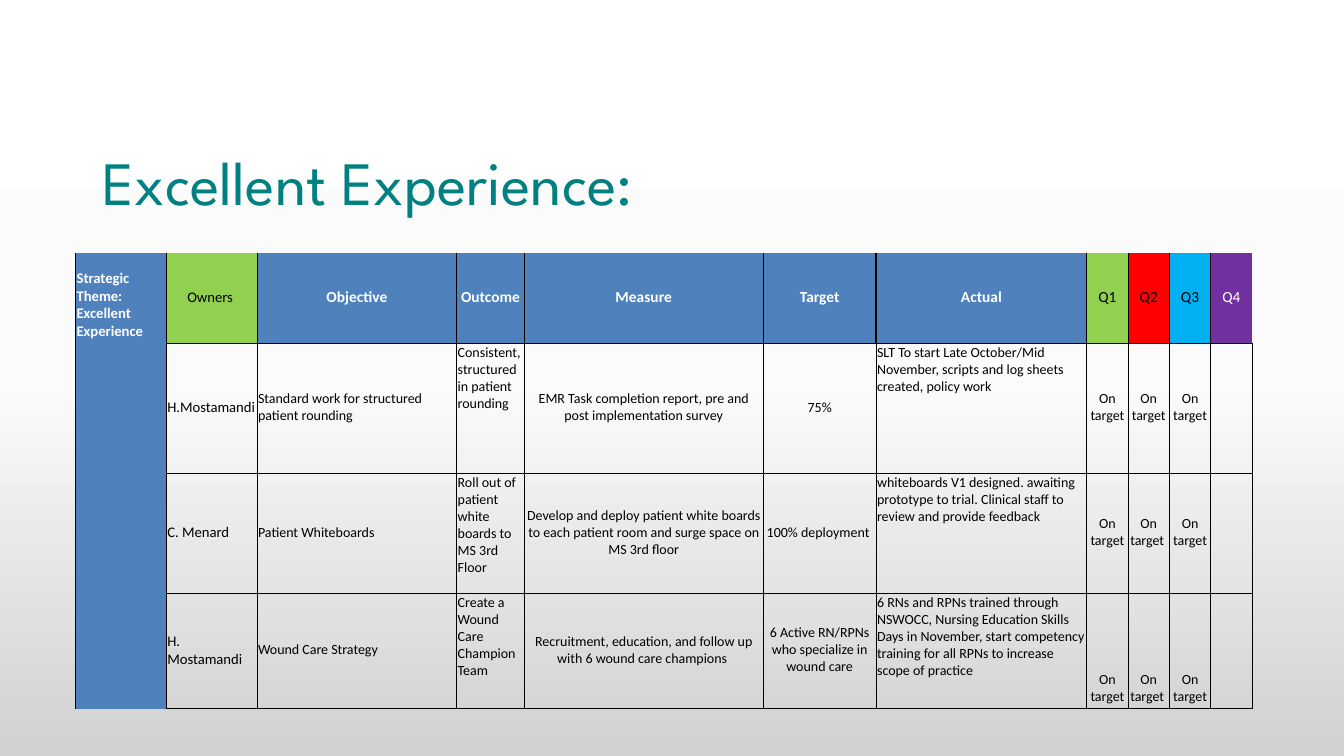
from lxml.etree import SubElement
from pptx import Presentation
from pptx.dml.color import RGBColor
from pptx.enum.text import MSO_ANCHOR, PP_ALIGN
from pptx.oxml.ns import qn
from pptx.util import Inches, Pt

BLUE, GREEN = "4F81BD", "92D050"
BLACK, WHITE, TEAL = "000000", "FFFFFF", "008080"
LEFT, CENTER = PP_ALIGN.LEFT, PP_ALIGN.CENTER
TOP, MIDDLE, BOTTOM = MSO_ANCHOR.TOP, MSO_ANCHOR.MIDDLE, MSO_ANCHOR.BOTTOM

COLUMN_WIDTHS = [0.9, 0.9, 1.98, 0.67, 2.37, 1.12, 2.09] + [0.41] * 4
ROW_HEIGHTS = [0.9, 1.29, 1.19, 1.14]
THEME = "Strategic Theme: Excellent Experience"

# Text, fill, text colour, size and bold of each heading after the theme
HEADINGS = [
    ("Owners ", GREEN, BLACK, 10.5, False),
    *[(text, BLUE, WHITE, 11, True)
      for text in ("Objective", "Outcome", "Measure", "Target", "Actual")],
    ("Q1", GREEN, BLACK, 11, False),
    ("Q2", "FF0000", BLACK, 11, False),
    ("Q3", "00B0F0", BLACK, 11, False),
    ("Q4", "7030A0", WHITE, 11, False),
]

# Owner, objective, outcome, measure, target, actual, Q1 to Q4
OBJECTIVES = [
    ("H.Mostamandi", "Standard work for structured patient rounding",
     "Consistent, structured in patient rounding",
     "EMR Task completion report, pre and post implementation survey", "75%",
     "SLT To start Late October/Mid November, scripts and log sheets created, "
     "policy work",
     "On target", "On target", "On target", ""),
    ("C. Menard", "Patient Whiteboards",
     "Roll out of patient white boards to MS 3rd Floor",
     "Develop and deploy patient white boards to each patient room and surge "
     "space on MS 3rd floor", "100% deployment ",
     "whiteboards V1 designed. awaiting prototype to trial. Clinical staff to "
     "review and provide feedback",
     "On target", "On target ", "On target", ""),
    ("H. Mostamandi", "Wound Care Strategy",
     "Create a Wound Care Champion Team",
     "Recruitment, education, and follow up with 6 wound care champions ",
     "6 Active RN/RPNs who specialize in wound care",
     "6 RNs and RPNs trained through NSWOCC, Nursing Education Skills Days in "
     "November, start competency training for all RPNs to increase scope of "
     "practice",
     "On target", "On target ", "On target", ""),
]
BODY_ALIGNMENTS = [LEFT, LEFT, LEFT, CENTER, CENTER, LEFT] + [CENTER] * 4
BODY_ANCHORS = [MIDDLE, MIDDLE, TOP, MIDDLE, MIDDLE, TOP]


def rgb(color):
    return RGBColor.from_string(color)


def write_text(text_frame, text, *, size, color=BLACK, font="Calibri",
               bold=False, align=LEFT, line_spacing=None):
    paragraph = text_frame.paragraphs[0]
    paragraph.alignment = align
    paragraph.line_spacing = line_spacing
    run = paragraph.add_run()
    run.text = text
    run.font.name = font
    run.font.size = Pt(size)
    run.font.bold = bold
    run.font.color.rgb = rgb(color)


def set_background(slide, stops):
    """Fill the slide from top to bottom through (percent, color) stops."""
    fill = slide.background.fill
    fill.gradient()
    fill.gradient_angle = 270
    stop_list = next(slide.element.iter(qn("a:gsLst")))
    stop_list.clear()
    for percent, color in stops:
        stop = SubElement(stop_list, qn("a:gs"), pos=str(percent * 1000))
        SubElement(stop, qn("a:srgbClr"), val=color)


def set_borders(cell, **widths):
    """Draw black borders of the given widths in points; hide the others."""
    properties = cell._tc.get_or_add_tcPr()
    for side in ("L", "R", "T", "B"):
        width = widths.get(side, 0)
        line = SubElement(properties, qn(f"a:ln{side}"), w=str(Pt(width)))
        if width:
            fill = SubElement(line, qn("a:solidFill"))
            SubElement(fill, qn("a:srgbClr"), val=BLACK)
        else:
            SubElement(line, qn("a:noFill"))


def format_cell(cell, borders, fill=None, anchor=MIDDLE):
    cell.margin_left = cell.margin_right = cell.margin_top = Inches(0.01)
    cell.margin_bottom = Inches(0.03)
    cell.vertical_anchor = anchor
    set_borders(cell, **borders)
    if fill:
        cell.fill.solid()
        cell.fill.fore_color.rgb = rgb(fill)
    else:
        cell.fill.background()


def add_title(slide):
    box = slide.shapes.add_textbox(Inches(0.92), Inches(1.17),
                                   Inches(11.5), Inches(1.35))
    box.text_frame.word_wrap = True
    box.text_frame.vertical_anchor = MIDDLE
    write_text(box.text_frame, "Excellent Experience:", size=44, color=TEAL,
               font="League Spartan", line_spacing=0.9)


def add_scorecard(slide):
    frame = slide.shapes.add_table(
        len(ROW_HEIGHTS), len(COLUMN_WIDTHS), Inches(0.75), Inches(2.51),
        Inches(sum(COLUMN_WIDTHS)), Inches(sum(ROW_HEIGHTS)))
    table = frame.table
    table.first_row = table.horz_banding = False
    for column, width in zip(table.columns, COLUMN_WIDTHS):
        column.width = Inches(width)
    for row, height in zip(table.rows, ROW_HEIGHTS):
        row.height = Inches(height)
    fill_theme_column(table)
    fill_headings(table)
    fill_objectives(table)


def fill_theme_column(table):
    for row in range(len(ROW_HEIGHTS)):
        format_cell(table.cell(row, 0), {"L": 1, "R": 0.5}, BLUE, BOTTOM)
    write_text(table.cell(0, 0).text_frame, THEME, size=10.5, color=WHITE,
               bold=True)


def fill_headings(table):
    last = len(HEADINGS)
    for column, (text, fill, color, size, bold) in enumerate(HEADINGS, 1):
        borders = {"L": 1 if 2 <= column <= 6 else 0.5, "B": 0.5}
        if column < last:
            borders["R"] = 1 if column <= 5 else 0.5
        cell = table.cell(0, column)
        format_cell(cell, borders, fill)
        write_text(cell.text_frame, text, size=size, color=color, bold=bold,
                   align=CENTER)


def fill_objectives(table):
    grid = dict.fromkeys("LRTB", 0.5)
    for row, texts in enumerate(OBJECTIVES, 1):
        quarter_anchor = BOTTOM if row == len(OBJECTIVES) else MIDDLE
        anchors = BODY_ANCHORS + [quarter_anchor] * 4
        cells = zip(texts, BODY_ALIGNMENTS, anchors)
        for column, (text, align, anchor) in enumerate(cells, 1):
            cell = table.cell(row, column)
            format_cell(cell, grid, anchor=anchor)
            if text:
                write_text(cell.text_frame, text, align=align,
                           size=10.5 if column == 1 else 10)


def main():
    presentation = Presentation()
    presentation.slide_width = Inches(13.33)
    presentation.slide_height = Inches(7.5)
    slide = presentation.slides.add_slide(presentation.slide_layouts[6])
    set_background(slide, [(0, WHITE), (50, "FBFBFB"), (100, "D1D1D1")])
    add_title(slide)
    add_scorecard(slide)
    presentation.save("out.pptx")


if __name__ == "__main__":
    main()
